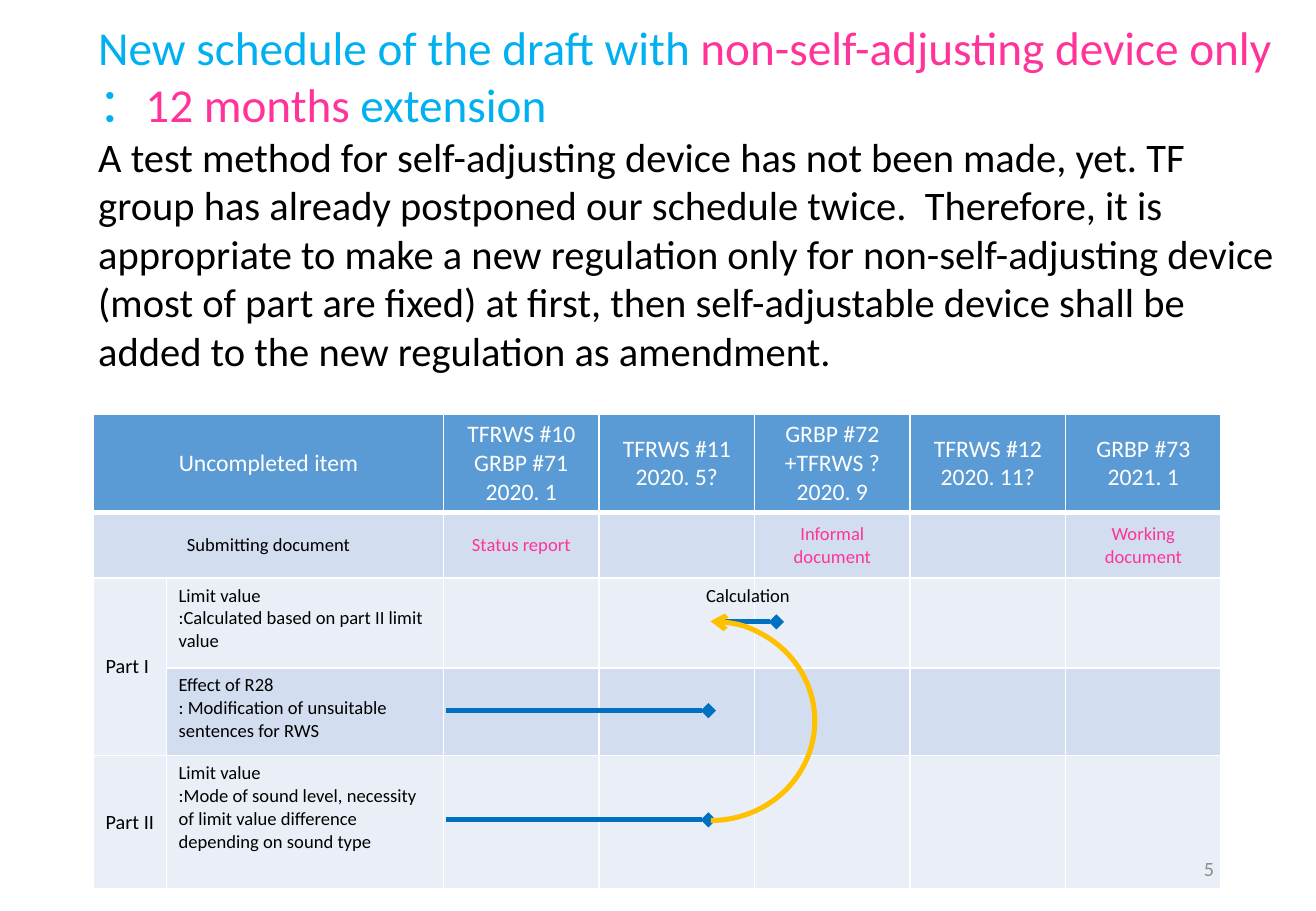
from dataclasses import dataclass

from lxml import etree
from pptx import Presentation
from pptx.dml.color import RGBColor
from pptx.enum.shapes import MSO_CONNECTOR, MSO_SHAPE
from pptx.enum.text import MSO_ANCHOR, MSO_AUTO_SIZE, PP_ALIGN
from pptx.oxml.ns import qn
from pptx.util import Pt

LEFT, CENTER, RIGHT = PP_ALIGN.LEFT, PP_ALIGN.CENTER, PP_ALIGN.RIGHT
TOP, MIDDLE = MSO_ANCHOR.TOP, MSO_ANCHOR.MIDDLE
GROW, FIXED = MSO_AUTO_SIZE.SHAPE_TO_FIT_TEXT, MSO_AUTO_SIZE.NONE
STRAIGHT, ARC = MSO_CONNECTOR.STRAIGHT, MSO_SHAPE.ARC

EMU_PER_PX = 9144  # 100 px to the inch


@dataclass(frozen=True)
class Theme:
    font: str = "Calibri"
    black: str = "000000"
    white: str = "FFFFFF"
    sky: str = "00B0F0"
    pink: str = "FF3399"
    grey: str = "8C8C8C"
    header: str = "5B9BD5"
    band_dark: str = "D2DEEF"
    band_light: str = "EAEFF7"
    bar: str = "0070C0"
    feedback: str = "FFC000"
    title_size: int = 28
    body_size: int = 24
    header_size: int = 14
    part_size: int = 12
    item_size: int = 11
    line_width: int = 3


THEME = Theme()

COLUMN_WIDTHS = [60, 228] + [128] * 5
ROW_HEIGHTS = [64, 54, 74, 72, 110]
ROW_FILLS = [THEME.header, THEME.band_dark, THEME.band_light,
             THEME.band_dark, THEME.band_light]
MERGES = [((0, 0), (0, 1)), ((1, 0), (1, 1)), ((2, 0), (3, 0))]
ROWS = [
    ["Uncompleted item", "", "TFRWS #10\nGRBP #71\n2020. 1", "TFRWS #11\n2020. 5?",
     "GRBP #72\n+TFRWS ?\n2020. 9", "TFRWS #12\n2020. 11?", "GRBP #73\n2021. 1"],
    ["Submitting document", "", "Status report", "", "Informal document", "",
     "Working\ndocument"],
    ["Part I", "Limit value\n:Calculated based on part II limit value"],
    ["", "Effect of R28\n: Modification of unsuitable sentences for RWS"],
    ["Part II", "Limit value\n:Mode of sound level, necessity of limit value "
                "difference depending on sound type"],
]
BARS = [(367, 583, 585), (588, 639, 512), (367, 583, 675)]  # start, end, height on slide
INTRODUCTION = (
    "A test method for self-adjusting device has not been made, yet. TF group has "
    "already postponed our schedule twice.  Therefore, it is appropriate to make a new "
    "regulation only for non-self-adjusting device (most of part are fixed) at first, "
    "then self-adjustable device shall be added to the new regulation as amendment.")


def px(length):
    return length * EMU_PER_PX


def apply(target, values):
    for name, value in values.items():
        setattr(target, name, value)


def write_text(frame, paragraphs, alignment):
    """Each paragraph is a list of (text, size, colour) runs."""
    for index, runs in enumerate(paragraphs):
        paragraph = frame.add_paragraph() if index else frame.paragraphs[0]
        paragraph.alignment = alignment
        for text, size, color in runs:
            run = paragraph.add_run()
            run.text = text
            apply(run.font, {"name": THEME.font, "size": Pt(size), "bold": False})
            run.font.color.rgb = RGBColor.from_string(color)


def add_text(slide, box, paragraphs, alignment=LEFT, anchor=TOP, auto_size=GROW):
    shape = slide.shapes.add_textbox(*map(px, box))
    apply(shape.text_frame, {"word_wrap": True, "auto_size": auto_size,
                             "vertical_anchor": anchor})
    write_text(shape.text_frame, paragraphs, alignment)


def style_line(shape, color, end_tag, end_type):
    shape.line.color.rgb = RGBColor.from_string(color)
    shape.line.width = Pt(THEME.line_width)
    end = etree.SubElement(shape.line._get_or_add_ln(), qn(end_tag))
    end.set("type", end_type)


def add_bar(slide, start, end, height):
    connector = slide.shapes.add_connector(
        STRAIGHT, px(start), px(height), px(end), px(height))
    style_line(connector, THEME.bar, "a:tailEnd", "diamond")
    etree.SubElement(connector._element.spPr, qn("a:effectLst"))


def add_feedback_arc(slide, box):
    arc = slide.shapes.add_shape(ARC, *map(px, box))
    arc.adjustments[0], arc.adjustments[1] = 107.82, 0
    arc.rotation = 90
    arc.shadow.inherit = False
    arc.fill.background()
    style_line(arc, THEME.feedback, "a:headEnd", "arrow")


def add_borders(cell, bottom_width):
    properties = cell._tc.get_or_add_tcPr()
    widths = {"a:lnL": 1, "a:lnR": 1, "a:lnT": 1, "a:lnB": bottom_width}
    for index, (tag, width) in enumerate(widths.items()):
        border = etree.Element(qn(tag), w=str(Pt(width)))
        fill = etree.SubElement(border, qn("a:solidFill"))
        etree.SubElement(fill, qn("a:srgbClr"), val=THEME.white)
        properties.insert(index, border)


def cell_format(row, column):
    """Size, colour, alignment and anchor by place in the table."""
    if row == 0:
        return THEME.header_size, THEME.white, CENTER, MIDDLE
    if row == 1:
        color = THEME.pink if column else THEME.black
        return THEME.item_size, color, CENTER, MIDDLE
    if column == 0:
        return THEME.part_size, THEME.black, LEFT, MIDDLE
    return THEME.item_size, THEME.black, LEFT, TOP


def add_schedule(slide, box):
    table = slide.shapes.add_table(
        len(ROW_HEIGHTS), len(COLUMN_WIDTHS), *map(px, box)).table
    apply(table, {"first_row": False, "horz_banding": False})
    for column, width in zip(table.columns, COLUMN_WIDTHS):
        column.width = px(width)
    for row, height in zip(table.rows, ROW_HEIGHTS):
        row.height = px(height)
    for first, last in MERGES:
        table.cell(*first).merge(table.cell(*last))
    for row, texts in enumerate(ROWS):
        for column in range(len(COLUMN_WIDTHS)):
            cell = table.cell(row, column)
            cell.fill.solid()
            cell.fill.fore_color.rgb = RGBColor.from_string(ROW_FILLS[row])
            add_borders(cell, 1 if row else 3)
            if column < len(texts) and texts[column]:
                size, color, alignment, anchor = cell_format(row, column)
                cell.vertical_anchor = anchor
                paragraphs = [[(line, size, color)] for line in texts[column].split("\n")]
                write_text(cell.text_frame, paragraphs, alignment)


def main():
    presentation = Presentation()
    apply(presentation, {"slide_width": px(1083), "slide_height": px(750)})
    slide = presentation.slides.add_slide(presentation.slide_layouts[6])

    # Schedule table
    add_schedule(slide, (77, 341, 928, 391))

    # Title and introduction
    size = THEME.title_size
    add_text(slide, (71, 10, 999, 306), [
        [("New schedule of the draft with ", size, THEME.sky),
         ("non-self-adjusting device only", size, THEME.pink)],
        [("：", size, THEME.sky), ("12 months", size, THEME.pink),
         (" extension", size, THEME.sky)],
        [(INTRODUCTION, THEME.body_size, THEME.black)],
    ])

    # Schedule bars and the feedback to the calculation
    for bar in BARS:
        add_bar(slide, *bar)
    add_feedback_arc(slide, (503, 508, 164, 171))
    add_text(slide, (530, 476, 171, 29),
             [[("Calculation", THEME.item_size, THEME.black)]], CENTER)

    # Page number
    add_text(slide, (765, 695, 244, 40),
             [[("5", THEME.part_size, THEME.grey)]], RIGHT, MIDDLE, FIXED)

    presentation.save("out.pptx")


if __name__ == "__main__":
    main()
